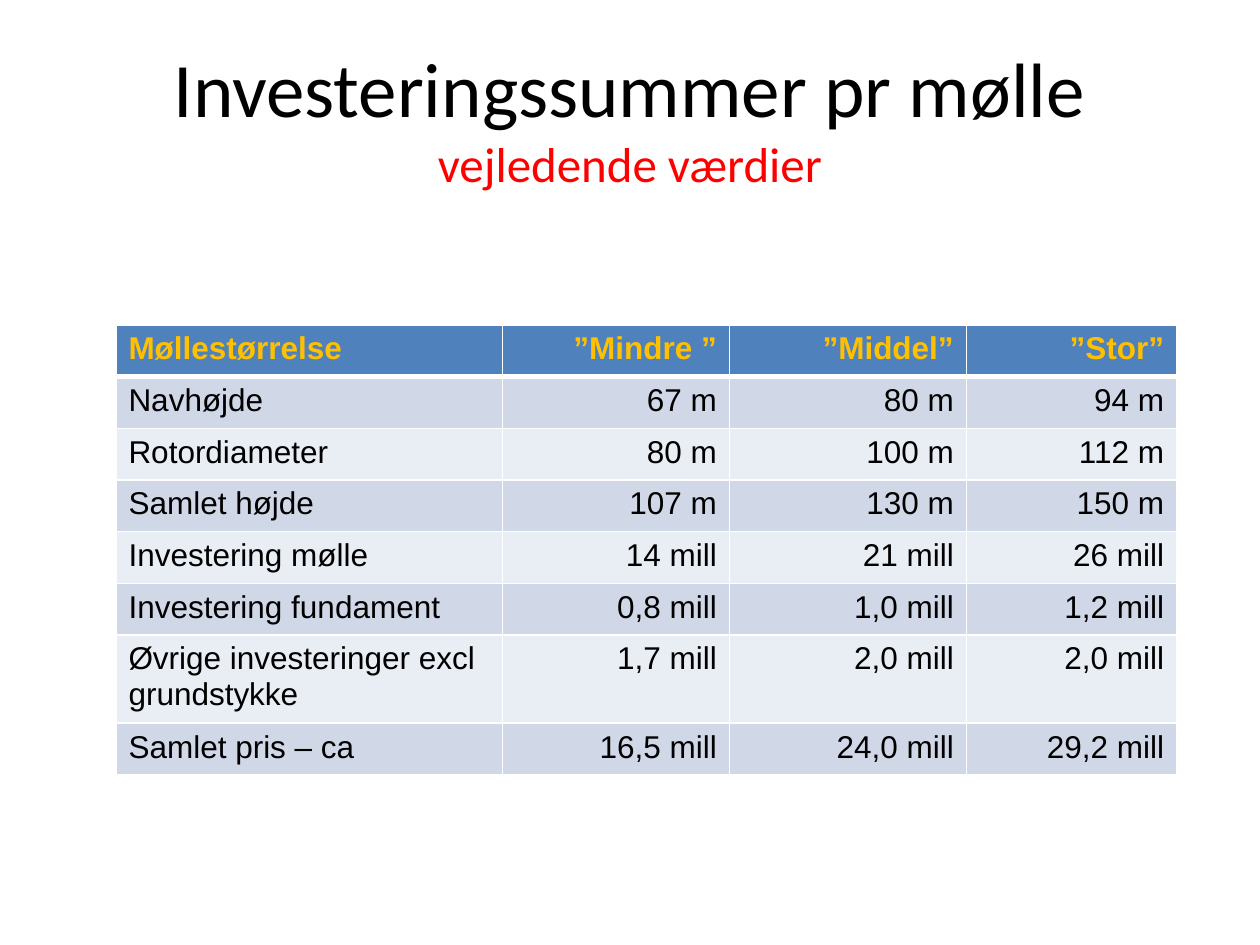
from lxml.etree import SubElement
from pptx import Presentation
from pptx.dml.color import RGBColor
from pptx.enum.text import MSO_ANCHOR, PP_ALIGN
from pptx.oxml.ns import qn
from pptx.util import Inches, Pt


def color(value):
    return RGBColor.from_string(value)


def add_span(para, text, hue, **formats):
    span = para.add_run()
    span.text = text
    span.font.color.rgb = color(hue)
    for name, value in formats.items():
        setattr(span.font, name, value)


deck = Presentation()
deck.slide_width, deck.slide_height = Inches(10), Inches(7.5)
page = deck.slides.add_slide(deck.slide_layouts[6])

# Title, with the subtitle wrapping to the second line
box = page.shapes.add_textbox(Inches(0.5), Inches(0.3), Inches(9), Inches(1.25))
frame = box.text_frame
frame.word_wrap = True
frame.vertical_anchor = MSO_ANCHOR.MIDDLE
para = frame.paragraphs[0]
para.alignment = PP_ALIGN.CENTER
add_span(para, "Investeringssummer pr mølle ", "000000", name="Calibri", size=Pt(44))
add_span(para, "vejledende værdier", "FF0000", name="Calibri", size=Pt(28))

# Table of turbine sizes and prices
rows = [
    ("Møllestørrelse", "”Mindre ”", "”Middel”", "”Stor”"),
    ("Navhøjde", "67 m", "80 m", "94 m"),
    ("Rotordiameter", "80 m", "100 m", "112 m"),
    ("Samlet højde", "107 m", "130 m", "150 m"),
    ("Investering mølle", "14 mill", "21 mill", "26 mill"),
    ("Investering fundament", "0,8 mill", "1,0 mill", "1,2 mill"),
    ("Øvrige investeringer excl grundstykke", "1,7 mill", "2,0 mill", "2,0 mill"),
    ("Samlet pris – ca", "16,5 mill", "24,0 mill", "29,2 mill"),
]
widths = [3.07, 1.8, 1.88, 1.67]
row_height = 0.41
table = page.shapes.add_table(
    len(rows), len(widths), Inches(0.92), Inches(2.58),
    Inches(sum(widths)), Inches(row_height * len(rows)),
).table
for column, width in zip(table.columns, widths):
    column.width = Inches(width)

for row_index, texts in enumerate(rows):
    header = row_index == 0
    table.rows[row_index].height = Inches(row_height)
    band = "4F81BD" if header else ("E9EDF4", "D0D8E8")[row_index % 2]
    for column_index, text in enumerate(texts):
        cell = table.cell(row_index, column_index)
        para = cell.text_frame.paragraphs[0]
        para.alignment = PP_ALIGN.RIGHT if column_index else PP_ALIGN.LEFT
        add_span(para, text, "FFC000" if header else "000000",
                 name="Arial", size=Pt(18), bold=header)

        # White borders, thicker between the header and the body
        heavy_side = {0: "B", 1: "T"}.get(row_index)
        properties = cell._tc.get_or_add_tcPr()
        for side in "LRTB":
            weight = Pt(3 if side == heavy_side else 1)
            line = SubElement(properties, qn(f"a:ln{side}"), w=str(weight))
            paint = SubElement(line, qn("a:solidFill"))
            SubElement(paint, qn("a:srgbClr"), val="FFFFFF")
        cell.fill.solid()
        cell.fill.fore_color.rgb = color(band)

deck.save("out.pptx")
